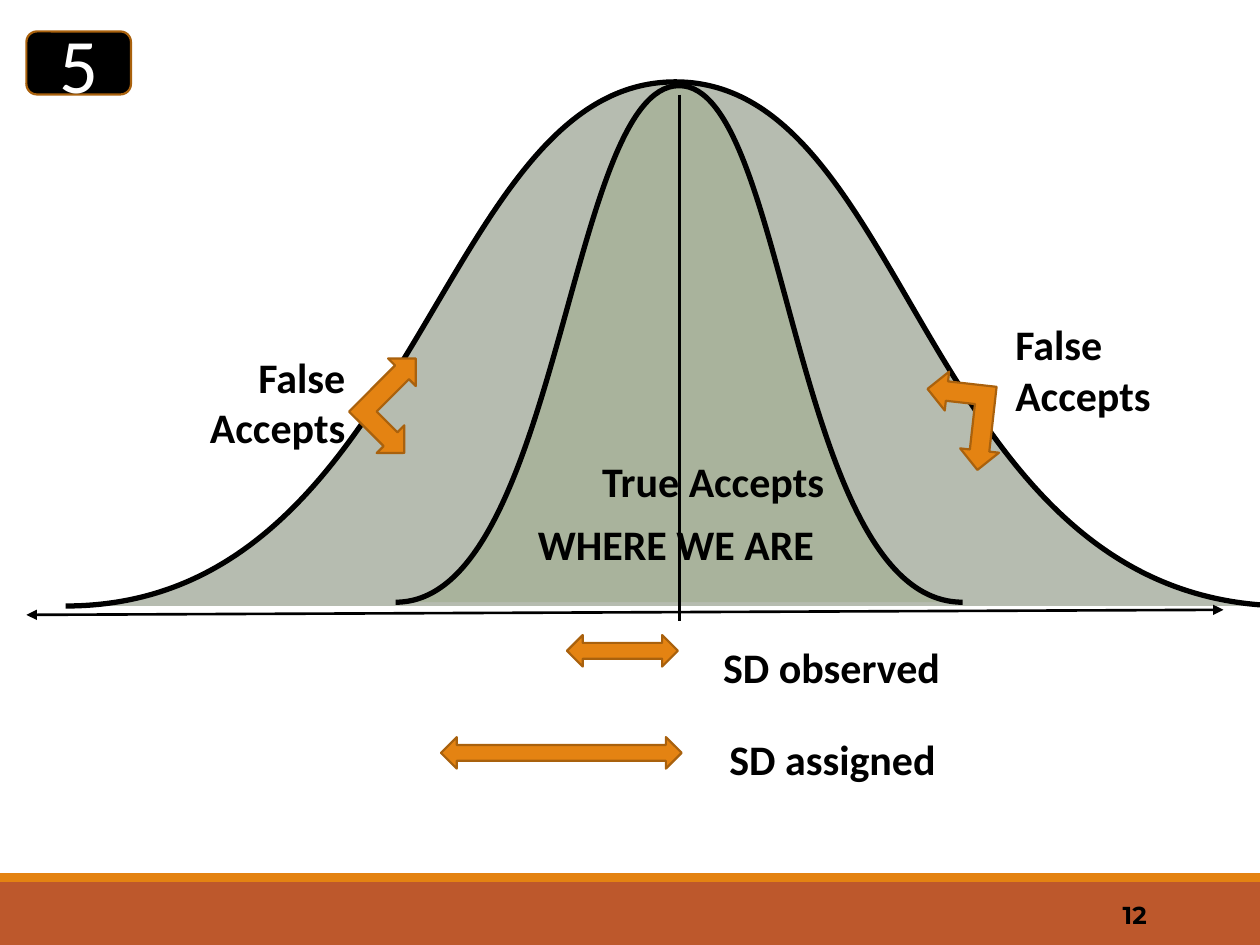
from dataclasses import dataclass
from typing import NamedTuple

from lxml import etree
from pptx import Presentation
from pptx import util as u
from pptx.dml.color import RGBColor
from pptx.enum import shapes, text
from pptx.oxml.ns import qn

COLS, ROWS = 100, 75
LEFT, CENTER, RIGHT = (text.PP_ALIGN.LEFT, text.PP_ALIGN.CENTER,
                       text.PP_ALIGN.RIGHT)
TOP, MIDDLE = text.MSO_ANCHOR.TOP, text.MSO_ANCHOR.MIDDLE
KIND = shapes.MSO_SHAPE


@dataclass(frozen=True)
class Theme:
    ink: str = "000000"
    paper: str = "FFFFFF"
    accent: str = "E48312"
    edge: str = "A9610D"
    footer: str = "BD582C"
    wide_fill: str = "6F7B63"
    narrow_fill: str = "A2AF92"
    font: str = "Calibri"
    number_font: str = "Montserrat"
    badge_size: int = 44
    label_size: int = 24
    number_size: int = 14


T = Theme()


class Box(NamedTuple):
    """Columns and rows of the slide grid."""
    x: float
    y: float
    w: float
    h: float


class Block(NamedTuple):
    kind: shapes.MSO_SHAPE
    box: Box
    fill: str
    edge: str | None = T.edge
    turn: float = 0


class Label(NamedTuple):
    words: str
    box: Box
    align: text.PP_ALIGN = LEFT
    anchor: text.MSO_ANCHOR = TOP
    size: int = T.label_size
    font: str = T.font
    color: str = T.ink
    bold: bool = True


class Bell(NamedTuple):
    """Two Bézier arcs: start, (handle, handle, peak), (handle, handle, end)."""
    points: tuple
    fill: str
    opacity: int


class Rule(NamedTuple):
    start: tuple
    end: tuple
    width: float
    arrows: bool = False


FOOTER = [Block(KIND.RECTANGLE, Box(0, 70, COLS, 5), T.footer, None),
          Block(KIND.RECTANGLE, Box(0, 69.3, COLS, 0.7), T.accent, None)]
BELLS = [
    Bell(((5.2, 48.1), (33.1, 48.1), (34.7, 6.5), (53.6, 6.5),
          (72.5, 6.5), (73.2, 48.1), (102.3, 48.1)), T.wide_fill, 50),
    Bell(((31.4, 47.8), (44.4, 47.8), (45.1, 6.8), (53.9, 6.8),
          (62.6, 6.8), (62.9, 47.8), (76.4, 47.8)), T.narrow_fill, 64),
]
RULES = [Rule((2.1, 48.8), (97.1, 48.4), 1.5, arrows=True),
         Rule((53.93, 7.5), (53.93, 49.3), 2)]
BADGE = Block(KIND.ROUNDED_RECTANGLE, Box(2.1, 2.5, 8.3, 5), T.ink)
ARROWS = [
    Block(KIND.LEFT_RIGHT_ARROW, Box(45, 50.4, 8.8, 2.5), T.accent),
    Block(KIND.LEFT_RIGHT_ARROW, Box(35, 58.5, 19.1, 2.5), T.accent),
    Block(KIND.LEFT_UP_ARROW, Box(27.7, 29.1, 7.5, 6.2), T.accent, turn=134.9),
    Block(KIND.LEFT_UP_ARROW, Box(72.7, 30.3, 7.5, 6.2), T.accent, turn=276.4),
]
BADGE_TEXT = Label("5", BADGE.box, CENTER, MIDDLE, T.badge_size,
                   color=T.paper, bold=False)
LABELS = [
    Label("SD observed", Box(56.4, 50.4, 20, 5)),
    Label("SD assigned", Box(56.9, 57.7, 20, 5)),
    Label("WHERE WE ARE", Box(41.7, 40.7, 26.7, 5)),
    Label("False Accepts", Box(13.1, 27.4, 15.3, 9.1), RIGHT),
    Label("False Accepts", Box(79.6, 24.8, 15.3, 9.1)),
    Label("True Accepts", Box(46.8, 35.7, 21.9, 5)),
    Label("12", Box(81.2, 70.6, 10.8, 4), RIGHT, MIDDLE, T.number_size,
          T.number_font),
]

prs = Presentation()
prs.slide_width, prs.slide_height = u.Inches(10), u.Inches(7.5)
CELL_W, CELL_H = prs.slide_width / COLS, prs.slide_height / ROWS


def emu(x: float, y: float) -> tuple[int, int]:
    return round(x * CELL_W), round(y * CELL_H)


def place(box: Box) -> tuple[int, ...]:
    return *emu(box.x, box.y), *emu(box.w, box.h)


def paint(sp, fill: str, edge: str | None, width: float) -> None:
    sp.shadow.inherit = False
    sp.fill.solid()
    sp.fill.fore_color.rgb = RGBColor.from_string(fill)
    if edge is None:
        sp.line.fill.background()
    else:
        sp.line.color.rgb = RGBColor.from_string(edge)
        sp.line.width = u.Pt(width)


def draw_block(s, block: Block):
    sp = s.shapes.add_shape(block.kind, *place(block.box))
    sp.rotation = block.turn
    paint(sp, block.fill, block.edge, 1.25)
    return sp


def bend(sp) -> None:
    """Turn each three straight segments of an outline into one Bézier arc."""
    segments = list(sp._element.iter(qn("a:lnTo")))
    for i in range(0, len(segments), 3):
        curve = etree.Element(qn("a:cubicBezTo"))
        segments[i].addprevious(curve)
        for segment in segments[i:i + 3]:
            curve.append(segment[0])
            segment.getparent().remove(segment)


def draw_bell(s, bell: Bell) -> None:
    start, *rest = [emu(*point) for point in bell.points]
    builder = s.shapes.build_freeform(*start)
    builder.add_line_segments(rest, close=False)
    sp = builder.convert_to_shape()
    bend(sp)
    paint(sp, bell.fill, T.ink, 3)
    color = sp._element.spPr.find(qn("a:solidFill"))[0]
    etree.SubElement(color, qn("a:alpha"), val=str(bell.opacity * 1000))


def draw_rule(s, rule: Rule) -> None:
    line = s.shapes.add_connector(shapes.MSO_CONNECTOR.STRAIGHT,
                                  *emu(*rule.start), *emu(*rule.end))
    line.line.color.rgb = RGBColor.from_string(T.ink)
    line.line.width = u.Pt(rule.width)
    if rule.arrows:
        for end in ("a:headEnd", "a:tailEnd"):
            etree.SubElement(line.line._get_or_add_ln(), qn(end), type="triangle")
    etree.SubElement(line._element.spPr, qn("a:effectLst"))


def write(sp, label: Label) -> None:
    tf = sp.text_frame
    tf.word_wrap = True
    tf.vertical_anchor = label.anchor
    p = tf.paragraphs[0]
    p.alignment = label.align
    r = p.add_run()
    r.text = label.words
    style = {"name": label.font, "size": u.Pt(label.size), "bold": label.bold}
    for name, value in style.items():
        setattr(r.font, name, value)
    r.font.color.rgb = RGBColor.from_string(label.color)


def main() -> None:
    s = prs.slides.add_slide(prs.slide_layouts[6])
    for block in FOOTER:
        draw_block(s, block)
    for bell in BELLS:
        draw_bell(s, bell)
    for rule in RULES:
        draw_rule(s, rule)
    write(draw_block(s, BADGE), BADGE_TEXT)
    for block in ARROWS:
        draw_block(s, block)
    for label in LABELS:
        write(s.shapes.add_textbox(*place(label.box)), label)
    prs.save("out.pptx")


if __name__ == "__main__":
    main()
